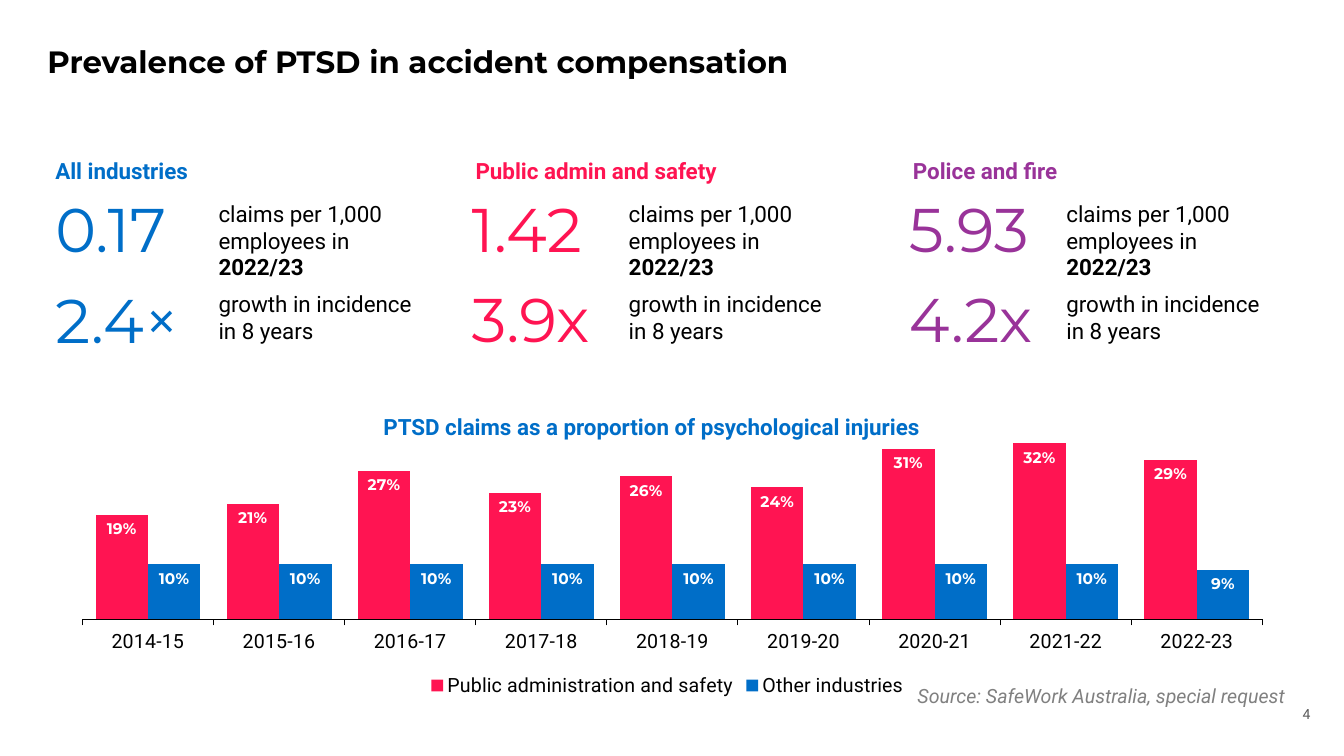
from lxml import etree
from pptx import Presentation
from pptx.chart.data import CategoryChartData
from pptx.dml.color import RGBColor
from pptx.enum.chart import XL_CHART_TYPE, XL_LABEL_POSITION, XL_LEGEND_POSITION, XL_TICK_MARK
from pptx.enum.text import MSO_ANCHOR, PP_ALIGN
from pptx.oxml.ns import qn
from pptx.util import Pt

COLUMNS = XL_CHART_TYPE.COLUMN_CLUSTERED
INSIDE_END = XL_LABEL_POSITION.INSIDE_END
LEGEND_BOTTOM = XL_LEGEND_POSITION.BOTTOM
TICK_OUT, TICK_NONE = XL_TICK_MARK.OUTSIDE, XL_TICK_MARK.NONE
TOP = MSO_ANCHOR.TOP
LEFT, CENTER, RIGHT = PP_ALIGN.LEFT, PP_ALIGN.CENTER, PP_ALIGN.RIGHT

BLACK = RGBColor(0x00, 0x00, 0x00)
WHITE = RGBColor(0xFF, 0xFF, 0xFF)
BLUE = RGBColor(0x00, 0x6E, 0xC8)
PINK = RGBColor(0xFF, 0x14, 0x52)
PURPLE = RGBColor(0x99, 0x33, 0x99)
GREY = RGBColor(0x80, 0x80, 0x80)
DARK_GREY = RGBColor(0x5B, 0x5B, 0x5B)
DISPLAY, BODY = "Montserrat", "Roboto"
PERCENT = r"0%;[Red]\-0%;\-"

CLAIMS = [[("claims per 1,000 employees in ", False), ("2022/23", True)]]
GROWTH = "growth in incidence in 8 years"
GROUPS = [
    ("All industries", "0.17", "2.4×", BLUE, 32.4, 32.4, 149, 133),
    ("Public admin and safety", "1.42", "3.9x", PINK, 332.6, 329.8, 442, 132.5),
    ("Police and fire", "5.93", "4.2x", PURPLE, 645, 642.2, 754.6, 132.5),
]
YEARS = [f"{year}-{year % 100 + 1}" for year in range(2014, 2023)]
SHARES = [
    ("Public administration and safety", PINK,
     [0.19, 0.21, 0.27, 0.23, 0.26, 0.24, 0.31, 0.32, 0.29]),
    ("Other industries", BLUE, [0.1] * 8 + [0.09]),
]


def style_font(font, size, color, face=BODY, bold=False, italic=False):
    font.size = Pt(size)
    font.name = face
    font.color.rgb = color
    font.bold = bold
    font.italic = italic


def write_text(frame, content, size=16, color=BLACK, face=BODY, bold=False,
               italic=False, align=LEFT, after=0, spacing=None, inset=True):
    frame.word_wrap = True
    frame.vertical_anchor = TOP
    if not inset:
        frame.margin_left = frame.margin_right = 0
        frame.margin_top = frame.margin_bottom = 0
    lines = [[(content, bold)]] if isinstance(content, str) else content
    for index, line in enumerate(lines):
        paragraph = frame.add_paragraph() if index else frame.paragraphs[0]
        paragraph.alignment = align
        paragraph.space_before = Pt(0)
        paragraph.space_after = Pt(after)
        if spacing:
            paragraph.line_spacing = spacing
        for words, heavy in line:
            run = paragraph.add_run()
            run.text = words
            style_font(run.font, size, color, face, heavy, italic)


def add_text(slide, box, content, **formatting):
    textbox = slide.shapes.add_textbox(*map(Pt, box))
    write_text(textbox.text_frame, content, **formatting)


def add_title(slide, words):
    title = slide.shapes.title
    title.left, title.top, title.width, title.height = map(Pt, (33.84, 33.84, 892, 36))
    write_text(title.text_frame, words, size=22, face=DISPLAY, bold=True,
               spacing=0.9, inset=False)


def add_group(slide, heading, rate, growth, color, heading_x, figure_x, note_x, figure_y):
    add_text(slide, (heading_x, 108.7, 207, 26.6), heading, color=color, bold=True)
    add_text(slide, (figure_x, figure_y, 131, 126), [[(rate, False)], [(growth, False)]],
             size=44, color=color, face=DISPLAY, after=12)
    for top, note in ((139.2, CLAIMS), (204, GROWTH)):
        add_text(slide, (note_x, top, 167, 46), note)


def fix_plot_area(chart, x, y, width, height):
    plot_area = chart._chartSpace.chart.plotArea
    for layout in plot_area.findall(qn("c:layout")):
        plot_area.remove(layout)
    layout = etree.Element(qn("c:layout"))
    manual = etree.SubElement(layout, qn("c:manualLayout"))
    settings = (("layoutTarget", "inner"), ("xMode", "edge"), ("yMode", "edge"),
                ("x", x), ("y", y), ("w", width), ("h", height))
    for tag, value in settings:
        etree.SubElement(manual, qn(f"c:{tag}")).set("val", str(value))
    plot_area.insert(0, layout)


def add_share_chart(slide):
    data = CategoryChartData(number_format=PERCENT)
    data.categories = YEARS
    for name, _, shares in SHARES:
        data.add_series(name, shares)
    box = map(Pt, (27.4, 302.4, 898.6, 198.7))
    chart = slide.shapes.add_chart(COLUMNS, *box, data).chart
    style_font(chart.font, 14, BLACK)
    chart.has_title = False
    chart.has_legend = True
    chart.legend.position = LEGEND_BOTTOM
    chart.legend.include_in_layout = False
    style_font(chart.legend.font, 14, BLACK)

    years = chart.category_axis
    years.major_tick_mark = TICK_OUT
    years.minor_tick_mark = TICK_NONE
    years.format.line.color.rgb = BLACK
    years.format.line.width = Pt(0.75)
    style_font(years.tick_labels.font, 14, BLACK)
    scale = chart.value_axis
    scale.visible = False
    scale.has_major_gridlines = False
    scale.minimum_scale, scale.maximum_scale = 0, 0.35

    plot = chart.plots[0]
    plot.gap_width, plot.overlap = 50, 0
    plot.vary_by_categories = False
    for series, (_, color, _) in zip(plot.series, SHARES):
        series.format.fill.solid()
        series.format.fill.fore_color.rgb = color
        series.invert_if_negative = False
        labels = series.data_labels
        labels.show_value = True
        labels.position = INSIDE_END
        labels.number_format = PERCENT
        labels.number_format_is_linked = False
        style_font(labels.font, 11, WHITE, DISPLAY, bold=True)
    fix_plot_area(chart, 0.035, 0.013, 0.938, 0.692)


def main():
    deck = Presentation()
    deck.slide_width, deck.slide_height = Pt(960), Pt(540)
    slide = deck.slides.add_slide(deck.slide_layouts[5])
    add_title(slide, "Prevalence of PTSD in accident compensation")
    for group in GROUPS:
        add_group(slide, *group)
    add_text(slide, (252.7, 291.6, 425.5, 26.6),
             "PTSD claims as a proportion of psychological injuries",
             color=BLUE, bold=True, align=CENTER)
    add_text(slide, (445.7, 485.3, 479.5, 24.5),
             "Source: SafeWork Australia, special request",
             size=14, color=GREY, italic=True, align=RIGHT)
    add_share_chart(slide)
    add_text(slide, (902.9, 504, 33.1, 14.4), "4", size=10, color=DARK_GREY,
             align=RIGHT, inset=False)
    deck.save("out.pptx")


if __name__ == "__main__":
    main()
